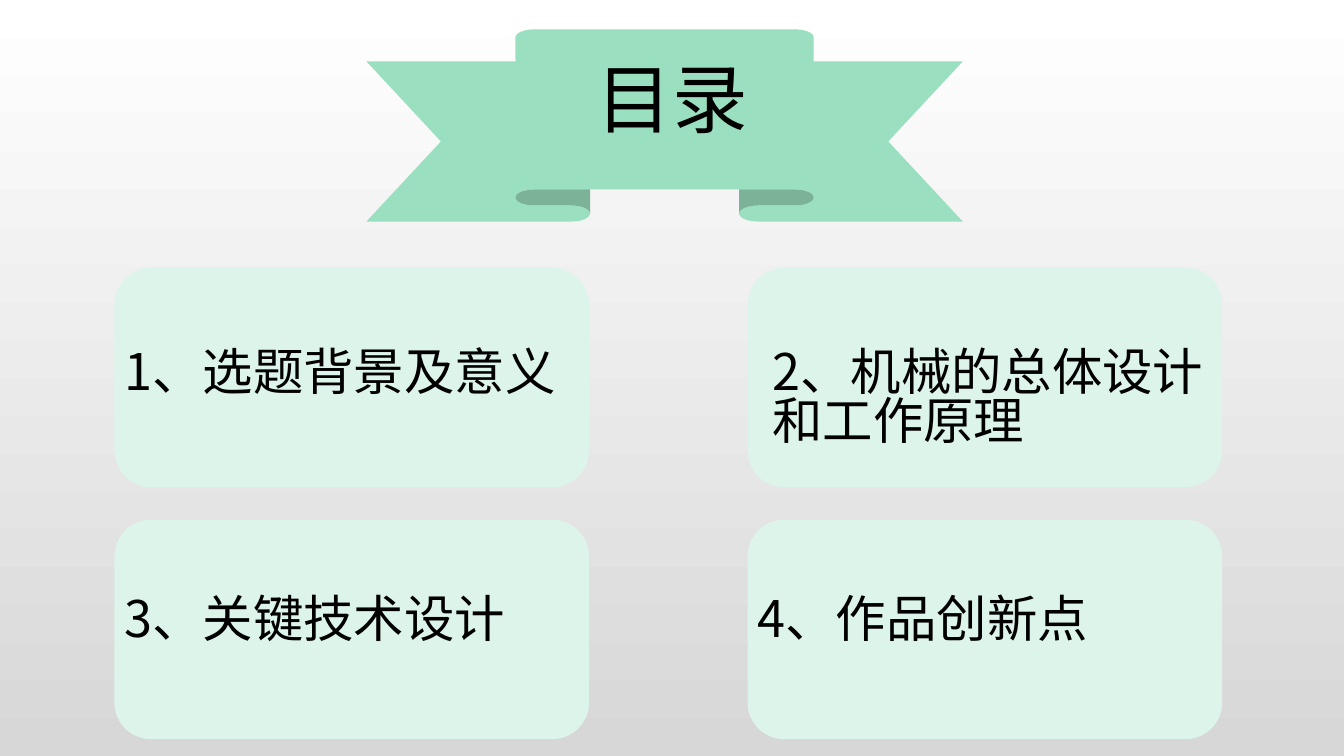
from pptx import Presentation
from pptx.dml.color import RGBColor
from pptx.enum.shapes import MSO_SHAPE as Shape
from pptx.enum.text import PP_ALIGN as Align
from pptx.util import Pt

PX = 9525
FONT = "Noto Sans CJK SC"
COLORS = {
    "top": "FFFFFF",
    "bottom": "D7D7D7",
    "ribbon": "9ADFBF",
    "card": "DDF4EA",
    "text": "000000",
}
CARD_LEFT, CARD_TOP, CARD_WIDTH, CARD_HEIGHT = 109, 255, 452, 209
COLUMN_STEP, ROW_STEP = 603, 240
TOPICS = [
    ("1、选题背景及意义", 0, 74),
    ("2、机械的总体设计和工作原理", 14, 74),
    ("3、关键技术设计", 0, 70),
    ("4、作品创新点", 0, 70),
]


def color(name):
    return RGBColor.from_string(COLORS[name])


def px(*lengths):
    return [length * PX for length in lengths]


def paint_background(slide):
    fill = slide.background.fill
    fill.gradient()
    fill.gradient_angle = 270
    for stop, name in zip(fill.gradient_stops, ("top", "bottom")):
        stop.color.rgb = color(name)


def add_panel(slide, kind, box, fill_name):
    panel = slide.shapes.add_shape(kind, *px(*box))
    panel.shadow.inherit = False
    panel.fill.solid()
    panel.fill.fore_color.rgb = color(fill_name)
    panel.line.fill.background()


def add_label(slide, text, box, size, align=Align.LEFT):
    frame = slide.shapes.add_textbox(*px(*box)).text_frame
    frame.word_wrap = True
    frame.text = text
    paragraph = frame.paragraphs[0]
    paragraph.alignment = align
    paragraph.line_spacing = 0.82
    for run in paragraph.runs:
        run.font.size = Pt(size)
        run.font.name = FONT
        run.font.color.rgb = color("text")
        fonts = run.font._element
        latin = fonts.find("{*}latin")
        east_asian = latin.makeelement(latin.tag.replace("latin", "ea"), {"typeface": FONT})
        latin.addnext(east_asian)


def add_topic(slide, index, text, indent, drop):
    row, column = divmod(index, 2)
    left = CARD_LEFT + column * COLUMN_STEP
    top = CARD_TOP + row * ROW_STEP
    add_panel(slide, Shape.ROUNDED_RECTANGLE, (left, top, CARD_WIDTH, CARD_HEIGHT), "card")
    add_label(slide, text, (left + indent, top + drop, CARD_WIDTH - indent, 60), 36)


def main():
    deck = Presentation()
    deck.slide_width, deck.slide_height = px(1280, 720)
    slide = deck.slides.add_slide(deck.slide_layouts[6])
    paint_background(slide)
    add_panel(slide, Shape.UP_RIBBON, (349, 28, 568, 183), "ribbon")
    add_label(slide, "目录", (420, 60, 441, 73), 54, Align.CENTER)
    for index, (text, indent, drop) in enumerate(TOPICS):
        add_topic(slide, index, text, indent, drop)
    deck.save("out.pptx")


if __name__ == "__main__":
    main()
